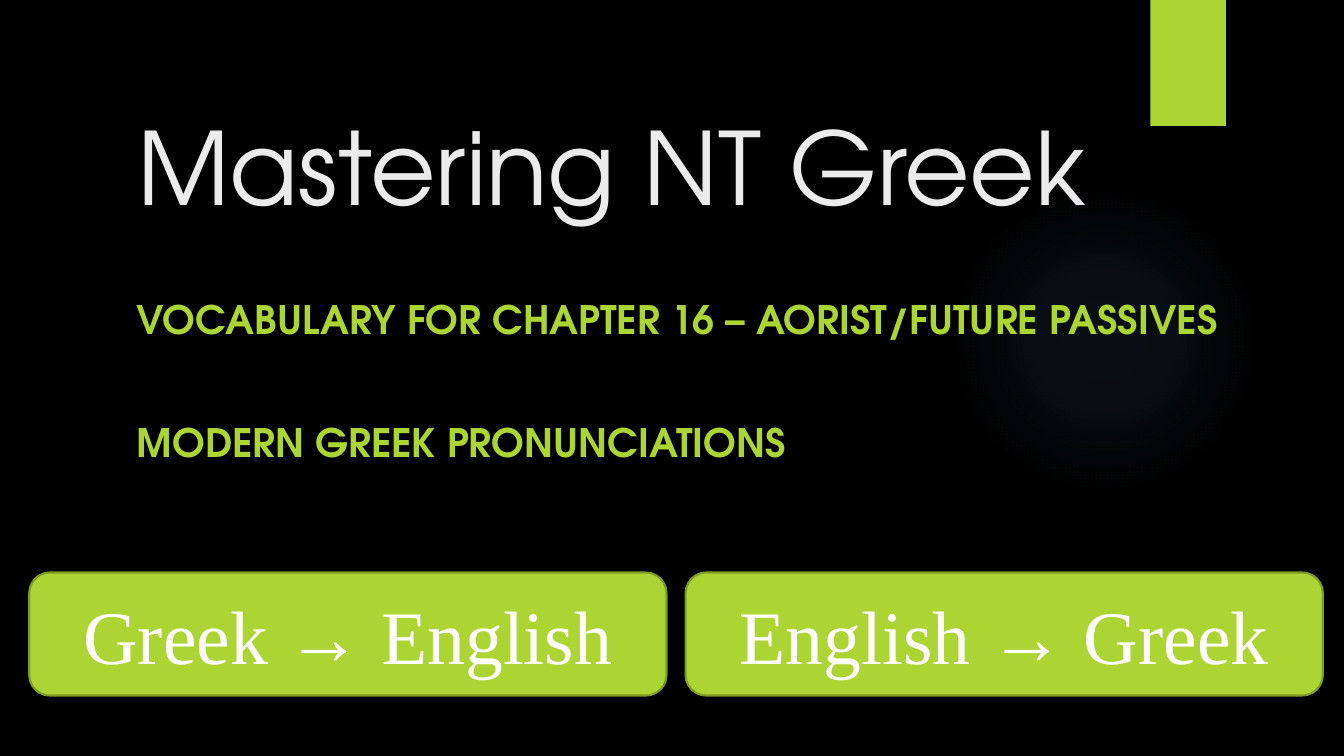
from dataclasses import dataclass

from lxml import etree
from pptx import Presentation
from pptx import util as u
from pptx.dml.color import RGBColor
from pptx.enum import shapes, text
from pptx.oxml import parse_xml
from pptx.oxml.ns import nsdecls, qn


@dataclass(frozen=True)
class Theme:
    background: str = "000000"
    accent: str = "ACD433"
    outline: str = "7F9D26"
    glow: str = "7AC4F0"
    title: str = "EBEBEB"
    button_text: str = "FFFFFF"
    display_font: str = "TeX Gyre Adventor"
    button_font: str = "Times New Roman"
    title_size: int = 72
    subtitle_size: int = 28
    button_size: int = 54


THEME = Theme()
WIDTH, HEIGHT = 13.33, 7.5
MARGIN = 1.26
BUTTON_LEFT, BUTTON_STEP = 0.29, 6.51
GLOW_STOPS = ((0, 7), (36, 6), (69, 0))


def inches(*lengths):
    return [u.Inches(length) for length in lengths]


def paint(fill, color):
    fill.solid()
    fill.fore_color.rgb = RGBColor.from_string(color)


def add_span(para, words, font, size, color, bold=False):
    span = para.add_run()
    span.text = words
    span.font.name = font
    span.font.size = u.Pt(size)
    span.font.bold = bold
    span.font.color.rgb = RGBColor.from_string(color)


def add_block(page, kind, place, color):
    block = page.shapes.add_shape(kind, *inches(*place))
    block.shadow.inherit = False
    paint(block.fill, color)
    block.line.fill.background()
    return block


def add_glow(page, place):
    glow = add_block(page, shapes.MSO_SHAPE.OVAL, place, THEME.glow)
    stops = "".join(
        f'<a:gs pos="{position * 1000}"><a:srgbClr val="{THEME.glow}">'
        f'<a:alpha val="{opacity * 1000}"/></a:srgbClr></a:gs>'
        for position, opacity in GLOW_STOPS
    )
    gradient = parse_xml(
        f'<a:gradFill {nsdecls("a")}><a:gsLst>{stops}</a:gsLst><a:path path="circle">'
        '<a:fillToRect l="50000" t="50000" r="50000" b="50000"/></a:path></a:gradFill>'
    )
    properties = glow.element.spPr
    properties.replace(properties.find(qn("a:solidFill")), gradient)


def add_tab(page, place):
    tab = add_block(page, shapes.MSO_SHAPE.RECTANGLE, place, THEME.accent)
    effects = tab.element.spPr.find(qn("a:effectLst"))
    shadow = etree.SubElement(
        effects, qn("a:outerShdw"),
        blurRad=str(u.Pt(3)), dist=str(u.Pt(2)), dir="5400000", rotWithShape="0",
    )
    shade = etree.SubElement(shadow, qn("a:srgbClr"), val="000000")
    etree.SubElement(shade, qn("a:alpha"), val="45000")


def set_title(page, words, place):
    title = page.shapes.title
    title.left, title.top, title.width, title.height = inches(*place)
    frame = title.text_frame
    frame.word_wrap = True
    frame.auto_size = text.MSO_AUTO_SIZE.NONE
    frame.vertical_anchor = text.MSO_ANCHOR.BOTTOM
    para = frame.paragraphs[0]
    para.alignment = text.PP_ALIGN.LEFT
    add_span(para, words, THEME.display_font, THEME.title_size, THEME.title)


def add_subtitle(page, lines, place):
    frame = page.shapes.add_textbox(*inches(*place)).text_frame
    frame.word_wrap = True
    for index, words in enumerate(lines):
        para = frame.add_paragraph() if index else frame.paragraphs[0]
        if index:
            para.space_before = u.Pt(54)
        add_span(para, words, THEME.display_font, THEME.subtitle_size, THEME.accent, True)


def add_button(page, column, words):
    place = (BUTTON_LEFT + column * BUTTON_STEP, 5.68, 6.32, 1.22)
    button = add_block(page, shapes.MSO_SHAPE.ROUNDED_RECTANGLE, place, THEME.accent)
    paint(button.line.fill, THEME.outline)
    button.line.width = u.Pt(1.5)
    frame = button.text_frame
    frame.word_wrap = True
    frame.vertical_anchor = text.MSO_ANCHOR.MIDDLE
    para = frame.paragraphs[0]
    para.alignment = text.PP_ALIGN.CENTER
    add_span(para, words, THEME.button_font, THEME.button_size, THEME.button_text)


def main():
    deck = Presentation()
    deck.slide_width, deck.slide_height = inches(WIDTH, HEIGHT)
    page = deck.slides.add_slide(deck.slide_layouts[5])
    paint(page.background.fill, THEME.background)
    add_glow(page, (9.41, 1.83, 3.08, 3.08))
    add_tab(page, (11.41, 0, 0.75, HEIGHT / 6))
    set_title(page, "Mastering NT Greek", (MARGIN, 0.7, 10.04, 1.59))
    add_subtitle(
        page,
        ("VOCABULARY FOR CHAPTER 16 – AORIST/FUTURE PASSIVES", "MODERN GREEK PRONUNCIATIONS"),
        (MARGIN, 2.88, 11.25, 2.69),
    )
    for column, words in enumerate(("Greek → English", "English → Greek")):
        add_button(page, column, words)
    deck.save("out.pptx")


if __name__ == "__main__":
    main()
